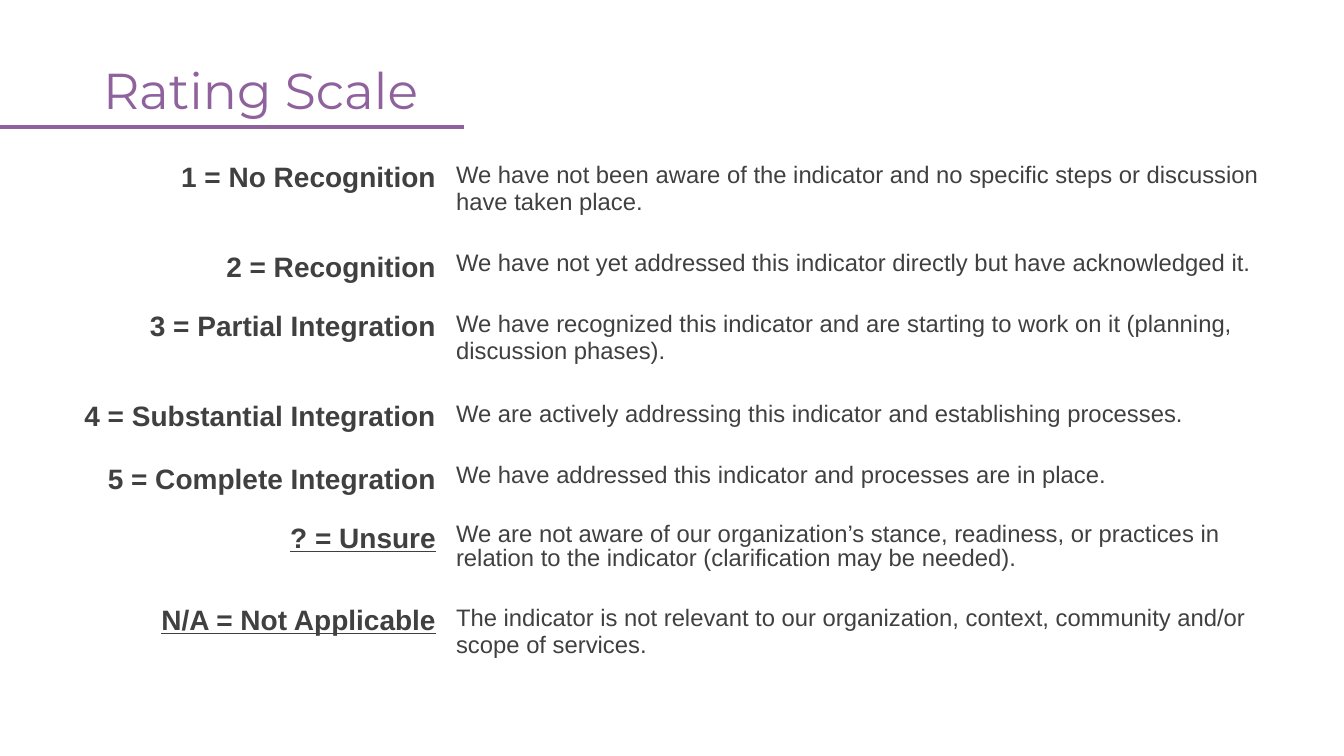
from lxml import etree
from pptx import Presentation
from pptx.dml.color import RGBColor
from pptx.enum.shapes import MSO_CONNECTOR
from pptx.enum.text import MSO_ANCHOR, PP_ALIGN
from pptx.oxml.ns import qn
from pptx.util import Pt

STRAIGHT = MSO_CONNECTOR.STRAIGHT
MIDDLE = MSO_ANCHOR.MIDDLE
LEFT, RIGHT = PP_ALIGN.LEFT, PP_ALIGN.RIGHT
EMU_PER_INCH, PX_PER_INCH = 914400, 100.8
COLORS = {"purple": "8F629E", "text": "404040"}
COL_WIDTHS = (427, 824)
TIGHT = 0.9

RATINGS = [
    ("1 = No Recognition", "We have not been aware of the indicator and no specific steps "
     "or discussion have taken place.", 90, None, False),
    ("2 = Recognition", "We have not yet addressed this indicator directly but have "
     "acknowledged it.", 59, TIGHT, False),
    ("3 = Partial Integration", "We have recognized this indicator and are starting to work "
     "on it (planning, discussion phases).", 90, None, False),
    ("4 = Substantial Integration", "We are actively addressing this indicator and "
     "establishing processes.", 63, None, False),
    ("5 = Complete Integration", "We have addressed this indicator and processes are in "
     "place.", 59, TIGHT, False),
    ("? = Unsure", "We are not aware of our organization’s stance, readiness, or practices "
     "in relation to the indicator (clarification may be needed).", 82, TIGHT, True),
    ("N/A = Not Applicable", "The indicator is not relevant to our organization, context, "
     "community and/or scope of services.", 93, None, True),
]


def px(n):
    """Turn pixels into EMU."""
    return round(n * EMU_PER_INCH / PX_PER_INCH)


def write(tf, text, size, color="text", font="Arial", bold=False, underline=False,
          align=LEFT, spacing=None):
    """Write one formatted paragraph into a text frame."""
    p = tf.paragraphs[0]
    p.alignment = align
    if spacing:
        p.line_spacing = spacing
    r = p.add_run()
    r.text = text
    r.font.name, r.font.size = font, Pt(size)
    r.font.bold, r.font.underline = bold, underline
    r.font.color.rgb = RGBColor.from_string(COLORS[color])


def add_heading(s, x, y, w, h):
    """Place the title in its box, with a rule from the slide's left edge."""
    sp = s.shapes.title
    sp.left, sp.top, sp.width, sp.height = px(x), px(y), px(w), px(h)
    sp.text_frame.vertical_anchor = MIDDLE
    write(sp.text_frame, "Rating Scale", 36, "purple", "Montserrat", spacing=TIGHT)
    rule_y = px(y + 87)
    line = s.shapes.add_connector(STRAIGHT, 0, rule_y, px(x + 371), rule_y)
    line.line.color.rgb = RGBColor.from_string(COLORS["purple"])
    line.line.width = Pt(2.25)
    etree.SubElement(line._element.spPr, qn("a:effectLst"))


def add_ratings(s, x, y):
    """Place the table of ratings and their meanings."""
    height = sum(row[2] for row in RATINGS)
    table = s.shapes.add_table(len(RATINGS), 2, px(x), px(y),
                               px(sum(COL_WIDTHS)), px(height)).table
    table.first_row = table.horz_banding = False
    for col, width in zip(table.columns, COL_WIDTHS):
        col.width = px(width)
    for row, (label, meaning, row_height, spacing, underline) in zip(table.rows, RATINGS):
        row.height = px(row_height)
        for cell in row.cells:
            cell.fill.background()
        write(row.cells[0].text_frame, label, 20, bold=True, underline=underline, align=RIGHT)
        write(row.cells[1].text_frame, meaning, 17, spacing=spacing)


def main():
    """Build and save the slide."""
    prs = Presentation()
    prs.slide_width, prs.slide_height = px(1344), px(756)
    s = prs.slides.add_slide(prs.slide_layouts[5])
    add_heading(s, 93, 40, 1159, 106)
    add_ratings(s, 19, 157)
    prs.save("out.pptx")


if __name__ == "__main__":
    main()
